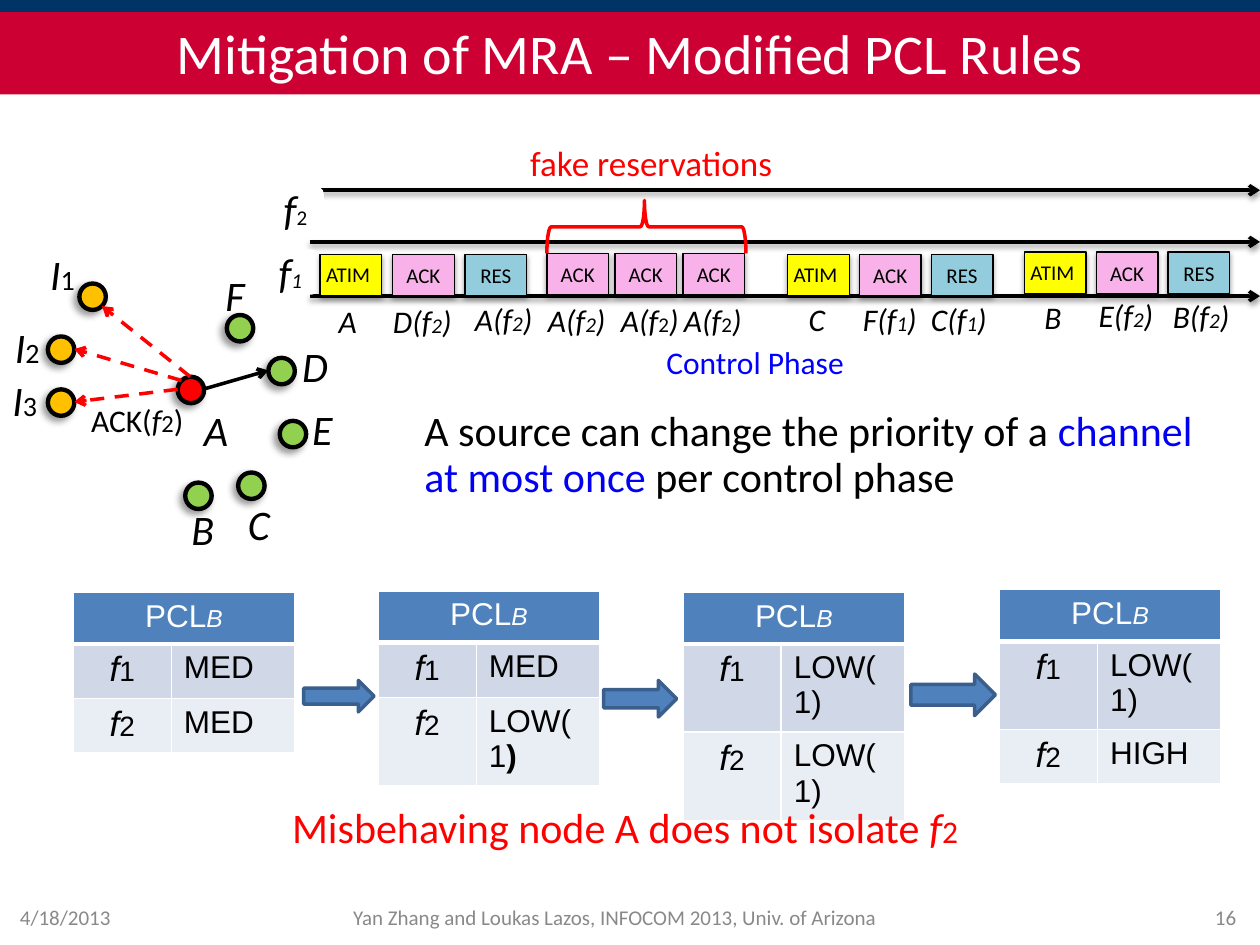
import pptx
import pptx.util
import pptx.dml.color
import pptx.enum.dml
import pptx.enum.shapes
import pptx.enum.text
import pptx.oxml.ns
import lxml.etree

Inches, Pt = pptx.util.Inches, pptx.util.Pt
SHAPE = pptx.enum.shapes.MSO_SHAPE
ALIGN = pptx.enum.text.PP_ALIGN
MIDDLE = pptx.enum.text.MSO_ANCHOR.MIDDLE
GROW = pptx.enum.text.MSO_AUTO_SIZE.SHAPE_TO_FIT_TEXT
qn = pptx.oxml.ns.qn

COLORS = {
    "black": "000000", "white": "FFFFFF", "navy": "003366", "crimson": "CC0033",
    "red": "FF0000", "blue": "0000FF", "accent": "0200F1", "gray": "898989",
    "ATIM": "FFFF00", "ACK": "F8B2E9", "RES": "93CDDD", "node": "92D050",
    "identity": "FFC000", "steel": "4F81BD", "steel_line": "3A5F8C",
    "row1": "D0D8E8", "row2": "E9EDF4",
}
SOFT = (38, 3.1, 1.6, 90)
DROP = (40, 4, 3, 135)


def rgb(name):
    """Return the named colour."""
    return pptx.dml.color.RGBColor.from_string(COLORS[name])


def at(box, dx, dy, w, h):
    """Return a rectangle in EMU offset from the corner of a box."""
    return [Inches(v) for v in (box[0] + dx, box[1] + dy, w, h)]


def run(text, size, color="black", name="Calibri", **fmt):
    """Describe one text run."""
    return text, color, dict(size=Pt(size), name=name, **fmt)


def indexed(name, index, big, small, end="", slant=True):
    """Describe an italic name with a smaller index and an optional ending."""
    runs = [run(name, big, italic=True), run(index, small, italic=slant)]
    return runs + ([run(end, big, italic=True)] if end else [])


def write(tf, runs, align=None, spacing=None, **frame):
    """Fill a text frame with one paragraph of runs."""
    for key, value in frame.items():
        setattr(tf, key, value)
    p = tf.paragraphs[0]
    p.alignment, p.line_spacing = align, spacing
    for text, color, fmt in runs:
        r = p.add_run()
        r.text = text
        r.font.color.rgb = rgb(color)
        for key, value in fmt.items():
            setattr(r.font, key, value)
    return p


def add_text(s, box, runs, wrap=True, **fmt):
    """Add a text box."""
    tf = s.shapes.add_textbox(*box).text_frame
    return write(tf, runs, **{"word_wrap": wrap, "auto_size": GROW, **fmt})


def add_shadow(sp, alpha, blur, dist, angle):
    """Give a shape or connector an outer shadow."""
    pr = sp.element.spPr
    effects = pr.find(qn("a:effectLst"))
    if effects is None:
        effects = lxml.etree.SubElement(pr, qn("a:effectLst"))
    outer = lxml.etree.SubElement(effects, qn("a:outerShdw"), blurRad=str(Pt(blur)), dist=str(Pt(dist)),
                                  dir=str(angle * 60000), algn="ctr", rotWithShape="0")
    color = lxml.etree.SubElement(outer, qn("a:srgbClr"), val=COLORS["black"])
    lxml.etree.SubElement(color, qn("a:alpha"), val=str(alpha * 1000))


def add_shape(s, kind, box, fill=None, line=None, width=1, shadow=None):
    """Add a preset shape with its fill, line and shadow."""
    sp = s.shapes.add_shape(kind, *box)
    sp.shadow.inherit = False
    for part, color in ((sp.fill, fill), (sp.line.fill, line)):
        if color:
            part.solid()
            part.fore_color.rgb = rgb(color)
        else:
            part.background()
    if line:
        sp.line.width = Pt(width)
    if shadow:
        add_shadow(sp, *shadow)
    return sp


def add_arrow(s, box, start, end, color="black", dash=None, shadow=None):
    """Add a straight line with an arrowhead at its end."""
    points = [Inches(box[i] + point[i]) for point in (start, end) for i in (0, 1)]
    c = s.shapes.add_connector(pptx.enum.shapes.MSO_CONNECTOR.STRAIGHT, *points)
    c.line.color.rgb, c.line.width = rgb(color), Pt(2)
    if dash:
        c.line.dash_style = dash
    pr = c.element.spPr
    lxml.etree.SubElement(pr.find(qn("a:ln")), qn("a:tailEnd"), type="arrow")
    lxml.etree.SubElement(pr, qn("a:effectLst"))
    if shadow:
        add_shadow(c, *shadow)


def header(s, box):
    """Place the top band and the title."""
    add_shape(s, SHAPE.RECTANGLE, at(box, 0, 0, box[2], 0.08), "navy", "navy", 2)
    sp = s.shapes.title
    sp.left, sp.top, sp.width, sp.height = at(box, 0, 0.08, box[2], 0.67)
    sp.fill.solid()
    sp.fill.fore_color.rgb = rgb("crimson")
    write(sp.text_frame, [run("Mitigation of MRA – Modified PCL Rules", 32, "white")],
          ALIGN.CENTER, vertical_anchor=MIDDLE)


def footer(s, box):
    """Place the date, the authors and the slide number."""
    for dx, w, text, align in ((0, 2.33, "4/18/2013", ALIGN.LEFT),
                               (2.61, 4.42, "Yan Zhang and Loukas Lazos, INFOCOM 2013, Univ. of Arizona", ALIGN.CENTER),
                               (7.52, 2.33, "16", ALIGN.RIGHT)):
        add_text(s, at(box, dx, 0, w, box[3]), [run(text, 12, "gray")],
                 align=align, vertical_anchor=MIDDLE, auto_size=None)


def timeline(s, box):
    """Place the channel axes, the packets and their senders."""
    for dy in (0.84, 0, 0.41):
        add_arrow(s, box, (0, dy), (box[2], dy), shadow=SOFT)
    for dx, dy, index, slant in ((-0.38, 0.47, "1", True), (-0.34, -0.03, "2", False)):
        sp = add_shape(s, SHAPE.ROUNDED_RECTANGLE, at(box, dx, dy, 0.45, 0.36), "white")
        write(sp.text_frame, indexed("f", index, 24, 12, slant=slant), ALIGN.CENTER,
              vertical_anchor=MIDDLE, word_wrap=False)
    exchange = ("ATIM", "ACK", "RES")
    for x, y, step, kinds in ((0.08, 0.51, 0.575, exchange), (1.88, 0.5, 0.54, ("ACK",) * 3),
                              (3.79, 0.51, 0.57, exchange), (5.67, 0.49, 0.57, exchange)):
        for i, kind in enumerate(kinds):
            dx = x + i * step
            sp = add_shape(s, SHAPE.RECTANGLE, at(box, dx, y, 0.49, 0.33), kind, "black", 0.75, SOFT)
            if kind == "ATIM":
                add_text(s, at(box, dx - 0.05, y + 0.01, 0.57, 0.3), [run(kind, 12)], wrap=False)
            else:
                write(sp.text_frame, [run(kind, 12)], ALIGN.CENTER, vertical_anchor=MIDDLE, word_wrap=False)
    for dx, dy, name in ((0.13, 0.84, "A"), (3.86, 0.82, "C"), (5.73, 0.81, "B")):
        add_text(s, at(box, dx, dy, 0.33, 0.4), [run(name, 18, italic=True)])
    for dx, dy, name, index, slant in (
            (0.56, 0.84, "D", "2", True), (1.21, 0.82, "A", "2", True), (1.79, 0.83, "A", "2", True),
            (2.37, 0.83, "A", "2", False), (2.87, 0.83, "A", "2", False), (4.29, 0.82, "F", "1", True),
            (4.83, 0.82, "C", "1", True), (6.16, 0.79, "E", "2", True), (6.75, 0.8, "B", "2", True)):
        add_text(s, at(box, dx, dy, 0.75, 0.4), indexed(name + "(f", index, 18, 12, ")", slant))
    brace = add_shape(s, SHAPE.LEFT_BRACE, at(box, 2.46, -0.5, 0.42, 1.58), None, "red", 2)
    brace.rotation = 90
    brace.adjustments[0], brace.adjustments[1] = 0.08, 0.51
    add_text(s, at(box, 1.65, -0.44, 2.14, 0.44), [run("fake reservations", 20, "red")], wrap=False)
    add_text(s, at(box, 2.73, 1.16, 1.64, 0.4), [run("Control Phase", 18, "blue")])


def network(s, box):
    """Place the nodes, their names and the links from node A."""
    for name, fill, x, y, tx, ty in (
            ("A", "red", 1.41, 1.07, 1.52, 1.24), ("B", "node", 1.47, 1.91, 1.42, 2.03),
            ("C", "node", 1.89, 1.83, 1.87, 1.99), ("D", "node", 2.13, 0.92, 2.3, 0.73),
            ("E", "node", 2.22, 1.42, 2.38, 1.23), ("F", "node", 1.8, 0.58, 1.69, 0.17),
            ("I1", "identity", 0.63, 0.33, 0.3, 0), ("I2", "identity", 0.38, 0.75, 0.02, 0.58),
            ("I3", "identity", 0.38, 1.17, 0, 1)):
        add_shape(s, SHAPE.OVAL, at(box, x, y, 0.21, 0.21), fill, "black", 2.5, DROP)
        runs = indexed("I", name[1], 24, 16, slant=False) if name[1:] else [run(name, 24, italic=True)]
        add_text(s, at(box, tx, ty, 0.4, 0.5), runs, wrap=False)
    for start, end in (((1.44, 1.1), (0.59, 0.85)), ((1.41, 1.17), (0.59, 1.27)), ((1.51, 1.07), (0.81, 0.51))):
        add_arrow(s, box, start, end, "red", pptx.enum.dml.MSO_LINE.DASH)
    add_arrow(s, box, (1.61, 1.17), (2.13, 1.02))
    ack = [run("ACK(", 18), run("f", 18, italic=True), run("2", 14), run(")", 18)]
    add_text(s, at(box, 0.59, 1.08, 1, 0.67), ack, wrap=False, align=ALIGN.CENTER,
             vertical_anchor=MIDDLE, auto_size=None)


def fill_cell(cell, color, runs, align, top=1, bottom=1):
    """Format one table cell and write its text."""
    pr = cell._tc.get_or_add_tcPr()
    for side, width in (("L", 1), ("R", 1), ("T", top), ("B", bottom)):
        ln = lxml.etree.SubElement(pr, qn("a:ln" + side), w=str(Pt(width)))
        solid = lxml.etree.SubElement(ln, qn("a:solidFill"))
        lxml.etree.SubElement(solid, qn("a:srgbClr"), val=COLORS["white"])
    cell.fill.solid()
    cell.fill.fore_color.rgb = rgb(color)
    write(cell.text_frame, runs, align)


def priority_table(s, box, levels):
    """Place one priority list of node B with a level for each channel."""
    table = s.shapes.add_table(3, 2, *at(box, 0, 0, box[2], box[3])).table
    for col, w in zip(table.columns, (0.78, 0.98)):
        col.width = Inches(w)
    for row, h in zip(table.rows, (0.41, 0.42, 0.42)):
        row.height = Inches(h)
    table.cell(0, 0).merge(table.cell(0, 1))
    head = [run("PCL", 18, "white", "Arial", bold=False), run("B", 14, "white", "Arial", bold=False, italic=True)]
    fill_cell(table.cell(0, 0), "steel", head, ALIGN.CENTER, bottom=3)
    for i, level in enumerate(levels, 1):
        top = 3 if i == 1 else 1
        channel = [run("f", 20, name="Arial", italic=True), run(str(i), 16, name="Arial")]
        parts = [run(t, 18, name="Arial", bold=t == ")") for t in level]
        fill_cell(table.cell(i, 0), f"row{i}", channel, ALIGN.CENTER, top)
        fill_cell(table.cell(i, 1), f"row{i}", parts, ALIGN.LEFT, top)


def priority_steps(s, box):
    """Place the priority lists and the arrows between them."""
    med, low, high = ["MED"], ["LOW(1)"], ["HIGH"]
    for dx, dy, w, h in ((1.83, 0.72, 0.56, 0.25), (4.21, 0.72, 0.58, 0.29), (6.65, 0.67, 0.67, 0.33)):
        add_shape(s, SHAPE.RIGHT_ARROW, at(box, dx, dy, w, h), "steel", "steel_line", 2)
    for dx, dy, levels in ((0, 0.02, (med, med)), (2.42, 0.01, (med, ["LOW(1", ")"])),
                           (4.84, 0.02, (low, low)), (7.35, 0, (low, high))):
        priority_table(s, (box[0] + dx, box[1] + dy, 1.76, 1.25), levels)


def statements(s, box):
    """Place the rule and the conclusion."""
    rule = [run("A source can change the priority of a ", 24),
            run("channel at most once", 24, "accent"), run(" per control phase", 24)]
    add_text(s, at(box, 1.05, 0, 6.58, 0.83), rule, spacing=0.9)
    result = [run("Misbehaving node A does not isolate ", 24, "red"),
              run("f", 24, "red", italic=True), run("2", 18, "red")]
    p = add_text(s, at(box, 0, 3.15, 5.67, 0.46), result, spacing=0.9)
    for key, value in {"marL": 0.25, "indent": -0.25}.items():
        p._p.get_or_add_pPr().set(key, str(Inches(value)))


def main():
    """Build the slide and save it."""
    prs = pptx.Presentation()
    prs.slide_width, prs.slide_height = Inches(10), Inches(7.5)
    s = prs.slides.add_slide(prs.slide_layouts[5])
    header(s, (0, 0, 10, 0.75))
    footer(s, (0.06, 7.08, 9.85, 0.4))
    timeline(s, (2.46, 1.51, 7.54, 1.6))
    network(s, (0, 1.92, 2.8, 2.5))
    priority_steps(s, (0.58, 4.68, 9.11, 1.8))
    statements(s, (2.22, 3.21, 7.63, 3.6))
    prs.save("out.pptx")


if __name__ == "__main__":
    main()
